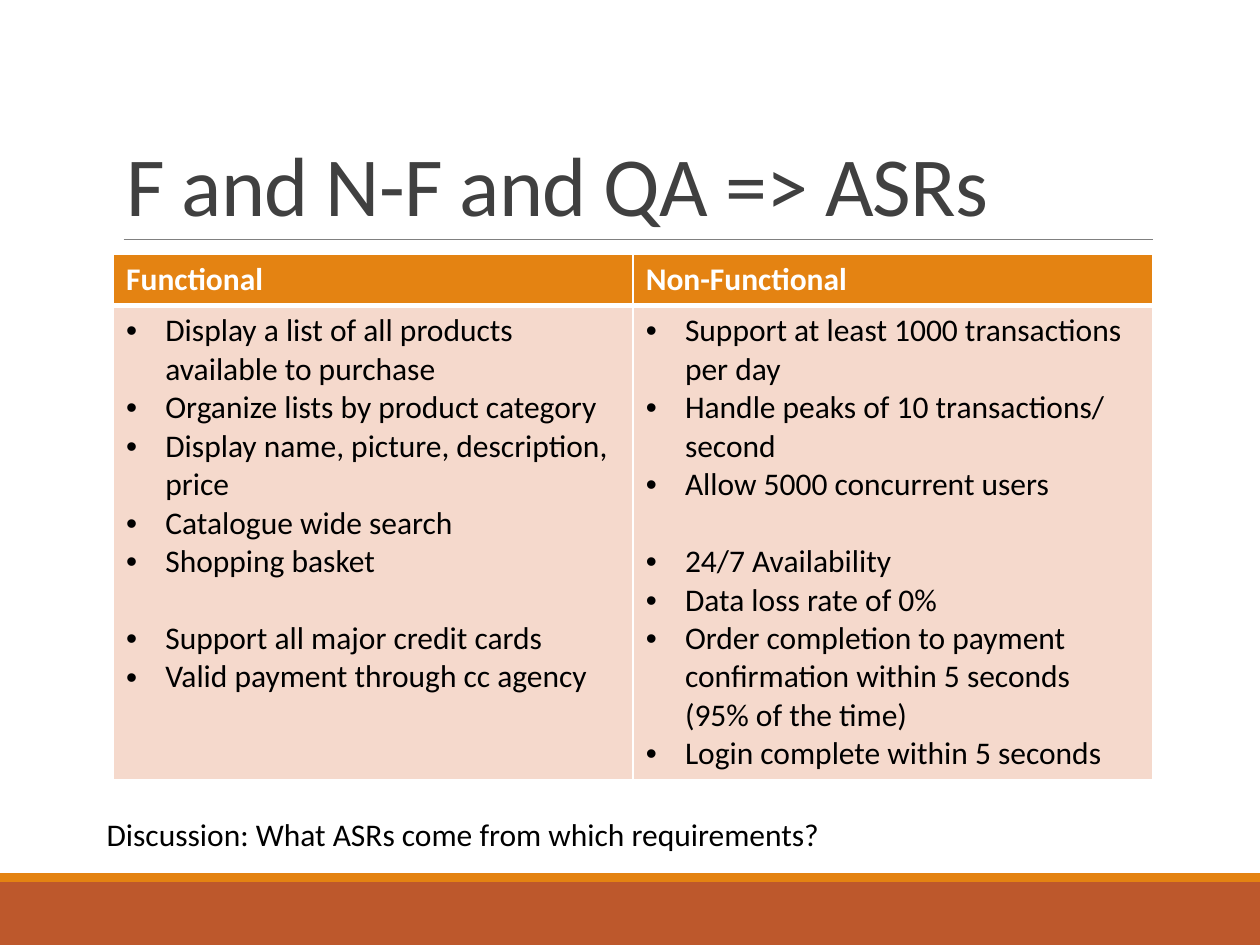
from lxml.etree import SubElement
from pptx import Presentation
from pptx.dml.color import RGBColor
from pptx.enum.shapes import MSO_CONNECTOR, MSO_SHAPE
from pptx.enum.text import MSO_ANCHOR, PP_ALIGN
from pptx.oxml.ns import qn
from pptx.util import Cm, Pt

# Content: each column holds groups of bullets, set apart by a gap
TITLE = "F and N-F and QA => ASRs"
COLUMNS = [
    ("Functional", [
        ["Display a list of all products available to purchase",
         "Organize lists by product category",
         "Display name, picture, description, price",
         "Catalogue wide search",
         "Shopping basket"],
        ["Support all major credit cards",
         "Valid payment through cc agency"],
    ]),
    ("Non-Functional", [
        ["Support at least 1000 transactions per day",
         "Handle peaks of 10 transactions/ second",
         "Allow 5000 concurrent users"],
        ["24/7 Availability",
         "Data loss rate of 0%",
         "Order completion to payment confirmation within 5 seconds (95% of the time)",
         "Login complete within 5 seconds"],
    ]),
]
QUESTION = "Discussion: What ASRs come from which requirements?"

# Style
FONT = "Calibri"
TEXT_SIZE = Pt(18)
GROUP_GAP = Pt(22)
BLACK = RGBColor(0x00, 0x00, 0x00)
WHITE = RGBColor(0xFF, 0xFF, 0xFF)
CHARCOAL = RGBColor(0x40, 0x40, 0x40)
GREY = RGBColor(0x80, 0x80, 0x80)
ORANGE = RGBColor(0xE4, 0x83, 0x12)
RUST = RGBColor(0xBD, 0x58, 0x2C)
PEACH = RGBColor(0xF5, 0xD9, 0xCC)

# Layout
PAGE_WIDTH, PAGE_HEIGHT = Cm(25.4), Cm(19.05)
LEFT, CONTENT_WIDTH = Cm(2.29), Cm(20.95)
RULE_LEFT, RULE_TOP = Cm(2.49), Cm(4.83)
TABLE_TOP, HEADER_HEIGHT, BODY_HEIGHT = Cm(5.13), Cm(1.03), Cm(9.5)
BULLET_INDENT = Cm(0.79)
BANDS = [(Cm(17.78), Cm(1.27), RUST), (Cm(17.6), Cm(0.18), ORANGE)]


def set_font(paragraph, color, size=TEXT_SIZE, bold=False):
    font = paragraph.font
    font.name, font.size, font.bold = FONT, size, bold
    font.color.rgb = color


def add_bullet(paragraph):
    properties = paragraph._p.get_or_add_pPr()
    properties.set("marL", str(BULLET_INDENT))
    properties.set("indent", str(-BULLET_INDENT))
    SubElement(properties, qn("a:buFont")).set("typeface", "Arial")
    SubElement(properties, qn("a:buChar")).set("char", "•")


def set_borders(cell, top, bottom):
    properties = cell._tc.get_or_add_tcPr()
    widths = {"a:lnL": 1, "a:lnR": 1, "a:lnT": top, "a:lnB": bottom}
    for tag, width in widths.items():
        line = SubElement(properties, qn(tag), w=str(Pt(width)))
        fill = SubElement(line, qn("a:solidFill"))
        SubElement(fill, qn("a:srgbClr"), val=str(WHITE))


def fill_cell(cell, color):
    cell.fill.solid()
    cell.fill.fore_color.rgb = color


deck = Presentation()
deck.slide_width, deck.slide_height = PAGE_WIDTH, PAGE_HEIGHT
page = deck.slides.add_slide(deck.slide_layouts[5])

# Footer bands
for top, height, color in BANDS:
    band = page.shapes.add_shape(MSO_SHAPE.RECTANGLE, 0, top, PAGE_WIDTH, height)
    band.shadow.inherit = False
    band.fill.solid()
    band.fill.fore_color.rgb = color
    band.line.fill.background()

# Title and the rule below it
title = page.shapes.title
title.left, title.top, title.width, title.height = LEFT, Cm(0.79), CONTENT_WIDTH, Cm(4.04)
frame = title.text_frame
frame.text = TITLE
frame.word_wrap = True
frame.vertical_anchor = MSO_ANCHOR.BOTTOM
para = frame.paragraphs[0]
para.alignment = PP_ALIGN.LEFT
para.line_spacing = 0.85
set_font(para, CHARCOAL, Pt(48))
para.runs[0].font._element.set("spc", "-50")

rule = page.shapes.add_connector(
    MSO_CONNECTOR.STRAIGHT, RULE_LEFT, RULE_TOP, LEFT + CONTENT_WIDTH, RULE_TOP)
rule.line.color.rgb = GREY
rule.line.width = Pt(0.5)
SubElement(rule._element.spPr, qn("a:effectLst"))

# Requirements table
table = page.shapes.add_table(
    2, len(COLUMNS), LEFT, TABLE_TOP, CONTENT_WIDTH, HEADER_HEIGHT + BODY_HEIGHT).table
table.rows[0].height, table.rows[1].height = HEADER_HEIGHT, BODY_HEIGHT
for column, (heading, groups) in enumerate(COLUMNS):
    header, body = table.cell(0, column), table.cell(1, column)
    set_borders(header, 1, 3)
    set_borders(body, 3, 1)
    fill_cell(header, ORANGE)
    fill_cell(body, PEACH)
    header.text = heading
    set_font(header.text_frame.paragraphs[0], WHITE, bold=True)

    body.text = "\n".join(item for group in groups for item in group)
    paragraphs = body.text_frame.paragraphs
    for para in paragraphs:
        set_font(para, BLACK)
    paragraphs[len(groups[0])].space_before = GROUP_GAP
    for para in paragraphs:
        add_bullet(para)

# Discussion question
box = page.shapes.add_textbox(Cm(1.9), Cm(16.31), Cm(21.59), Cm(1.02))
box.text_frame.word_wrap = True
box.text_frame.text = QUESTION
set_font(box.text_frame.paragraphs[0], BLACK)

deck.save("out.pptx")
